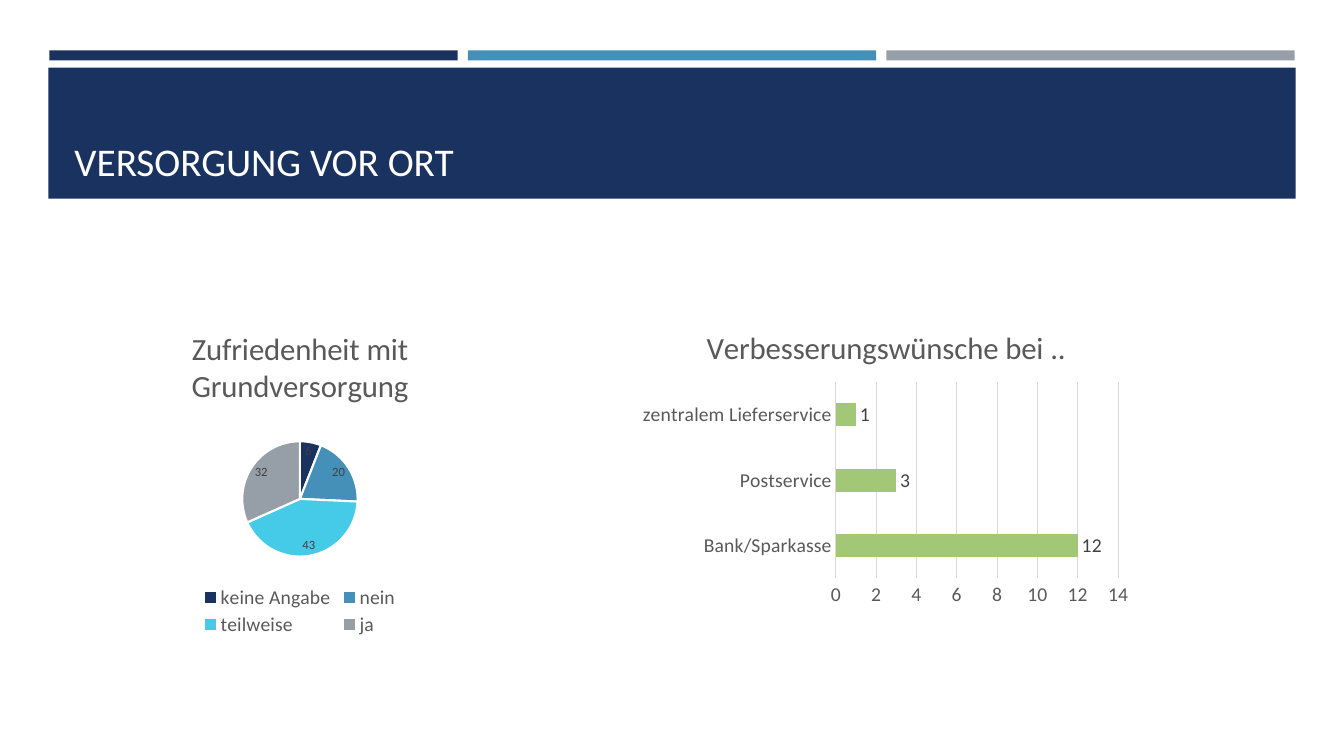
from dataclasses import dataclass

from lxml.etree import SubElement
from pptx import Presentation
from pptx.chart.chart import Chart
from pptx.chart.data import CategoryChartData
from pptx.dml.color import RGBColor
from pptx.enum.chart import XL_CHART_TYPE as ChartType
from pptx.enum.chart import XL_LABEL_POSITION as LabelPosition
from pptx.enum.chart import XL_LEGEND_POSITION as LegendPosition
from pptx.enum.chart import XL_TICK_MARK as TickMark
from pptx.enum.shapes import MSO_SHAPE as ShapeKind
from pptx.enum.text import MSO_ANCHOR as Anchor
from pptx.oxml.ns import qn
from pptx.slide import Slide
from pptx.text.text import Font
from pptx.util import Inches, Pt

NAVY = RGBColor(0x1A, 0x32, 0x60)
BLUE = RGBColor(0x45, 0x90, 0xB8)
CYAN = RGBColor(0x45, 0xCB, 0xE8)
GRAY = RGBColor(0x96, 0x9F, 0xA7)
GREEN = RGBColor(0xA2, 0xC7, 0x77)
WHITE = RGBColor(0xFF, 0xFF, 0xFF)
BLACK = RGBColor(0, 0, 0)
TEXT_GRAY = RGBColor(0x59, 0x59, 0x59)
LABEL_GRAY = RGBColor(0x40, 0x40, 0x40)
LINE_GRAY = RGBColor(0xD9, 0xD9, 0xD9)
FONT = "Calibri"


@dataclass(frozen=True)
class Area:
    left: float
    top: float
    width: float
    height: float

    def lengths(self) -> list[int]:
        return [Inches(side) for side in (self.left, self.top, self.width, self.height)]


@dataclass(frozen=True)
class Band:
    area: Area
    color: RGBColor


@dataclass(frozen=True)
class ChartPlan:
    kind: ChartType
    area: Area
    title: str
    values: dict[str, int]
    plot_area: Area
    base_size: int
    label_size: int
    label_position: LabelPosition


BANDS = [
    *(Band(Area(0.49 + 4.15 * column, 0.5, 4.05, 0.1), color)
      for column, color in enumerate((NAVY, BLUE, GRAY))),
    Band(Area(0.48, 0.67, 12.37, 1.3), NAVY),
]

SATISFACTION = ChartPlan(
    ChartType.PIE, Area(0.32, 3.07, 5.31, 3.27), "Zufriedenheit mit Grundversorgung",
    {"keine Angabe": 6, "nein": 20, "teilweise": 43, "ja": 32},
    Area(0.39, 0.4, 0.22, 0.35), 10, 9, LabelPosition.BEST_FIT)
WISHES = ChartPlan(
    ChartType.BAR_CLUSTERED, Area(6.29, 3.07, 5, 3), "Verbesserungswünsche bei ..",
    {"Bank/Sparkasse": 12, "Postservice": 3, "zentralem Lieferservice": 1},
    Area(0.4, 0.24, 0.56, 0.65), 14, 14, LabelPosition.OUTSIDE_END)


def style_font(font: Font, size: float, color: RGBColor) -> None:
    font.name = FONT
    font.size = Pt(size)
    font.bold = False
    font.color.rgb = color


def add_band(page: Slide, band: Band) -> None:
    shape = page.shapes.add_shape(ShapeKind.RECTANGLE, *band.area.lengths())
    shape.shadow.inherit = False
    shape.fill.solid()
    shape.fill.fore_color.rgb = band.color
    shape.line.fill.background()


def add_heading(page: Slide, text: str) -> None:
    box = page.shapes.add_textbox(*Area(0.64, 0.77, 12.06, 1.11).lengths())
    frame = box.text_frame
    frame.word_wrap = True
    frame.vertical_anchor = Anchor.BOTTOM
    span = frame.paragraphs[0].add_run()
    span.text = text
    style_font(span.font, 28, WHITE)


def place_part(part, area: Area, inner: bool = False) -> None:
    """Fix a chart part's layout in fractions of the chart."""
    layout = part.find(qn("c:layout"))
    if layout is None:
        layout = SubElement(part, qn("c:layout"))
        part.remove(layout)
        position = 1 if part.tag == qn("c:legend") else 0
        part.insert(position, layout)
    manual = SubElement(layout, qn("c:manualLayout"))
    settings = {"layoutTarget": "inner"} if inner else {}
    settings |= {"xMode": "edge", "yMode": "edge", "x": area.left, "y": area.top,
                 "w": area.width, "h": area.height}
    for name, value in settings.items():
        SubElement(manual, qn(f"c:{name}")).set("val", str(value))


def add_chart(page: Slide, plan: ChartPlan) -> Chart:
    data = CategoryChartData()
    data.categories = list(plan.values)
    data.add_series("Series 1", list(plan.values.values()))
    chart = page.shapes.add_chart(plan.kind, *plan.area.lengths(), data).chart
    style_font(chart.font, plan.base_size, BLACK)
    chart.has_legend = False
    chart.has_title = True
    chart.chart_title.include_in_layout = False
    span = chart.chart_title.text_frame.paragraphs[0].add_run()
    span.text = plan.title
    style_font(span.font, 22, TEXT_GRAY)
    plot = chart.plots[0]
    plot.has_data_labels = True
    labels = plot.data_labels
    labels.show_value = True
    labels.show_percentage = False
    labels.position = plan.label_position
    style_font(labels.font, plan.label_size, LABEL_GRAY)
    place_part(chart.element.find(f".//{qn('c:plotArea')}"), plan.plot_area, inner=True)
    return chart


def style_pie(chart: Chart) -> None:
    series = chart.plots[0].series[0]
    for index, color in enumerate((NAVY, BLUE, CYAN, GRAY)):
        wedge = series.points[index].format
        wedge.fill.solid()
        wedge.fill.fore_color.rgb = color
        wedge.line.color.rgb = WHITE
        wedge.line.width = Pt(1.5)
    chart.has_legend = True
    legend = chart.legend
    legend.position = LegendPosition.BOTTOM
    legend.include_in_layout = False
    style_font(legend.font, 14, TEXT_GRAY)
    place_part(chart.element.find(f".//{qn('c:legend')}"), Area(0.31, 0.83, 0.38, 0.17))


def style_bars(chart: Chart) -> None:
    plot = chart.plots[0]
    plot.gap_width = 182
    plot.vary_by_categories = False
    fill = plot.series[0].format.fill
    fill.solid()
    fill.fore_color.rgb = GREEN
    for axis in (chart.category_axis, chart.value_axis):
        axis.major_tick_mark = TickMark.NONE
        axis.minor_tick_mark = TickMark.NONE
        style_font(axis.tick_labels.font, 14, TEXT_GRAY)
    chart.value_axis.format.line.fill.background()
    chart.value_axis.minimum_scale = 0
    chart.value_axis.maximum_scale = 14
    chart.value_axis.major_unit = 2
    chart.value_axis.has_major_gridlines = True
    for line in (chart.category_axis.format.line,
                 chart.value_axis.major_gridlines.format.line):
        line.color.rgb = LINE_GRAY
        line.width = Pt(0.75)


def main() -> None:
    deck = Presentation()
    deck.slide_width = Inches(13.33)
    deck.slide_height = Inches(7.5)
    page = deck.slides.add_slide(deck.slide_layouts[6])
    for band in BANDS:
        add_band(page, band)
    add_heading(page, "VERSORGUNG VOR ORT")
    style_pie(add_chart(page, SATISFACTION))
    style_bars(add_chart(page, WISHES))
    deck.save("out.pptx")


if __name__ == "__main__":
    main()
